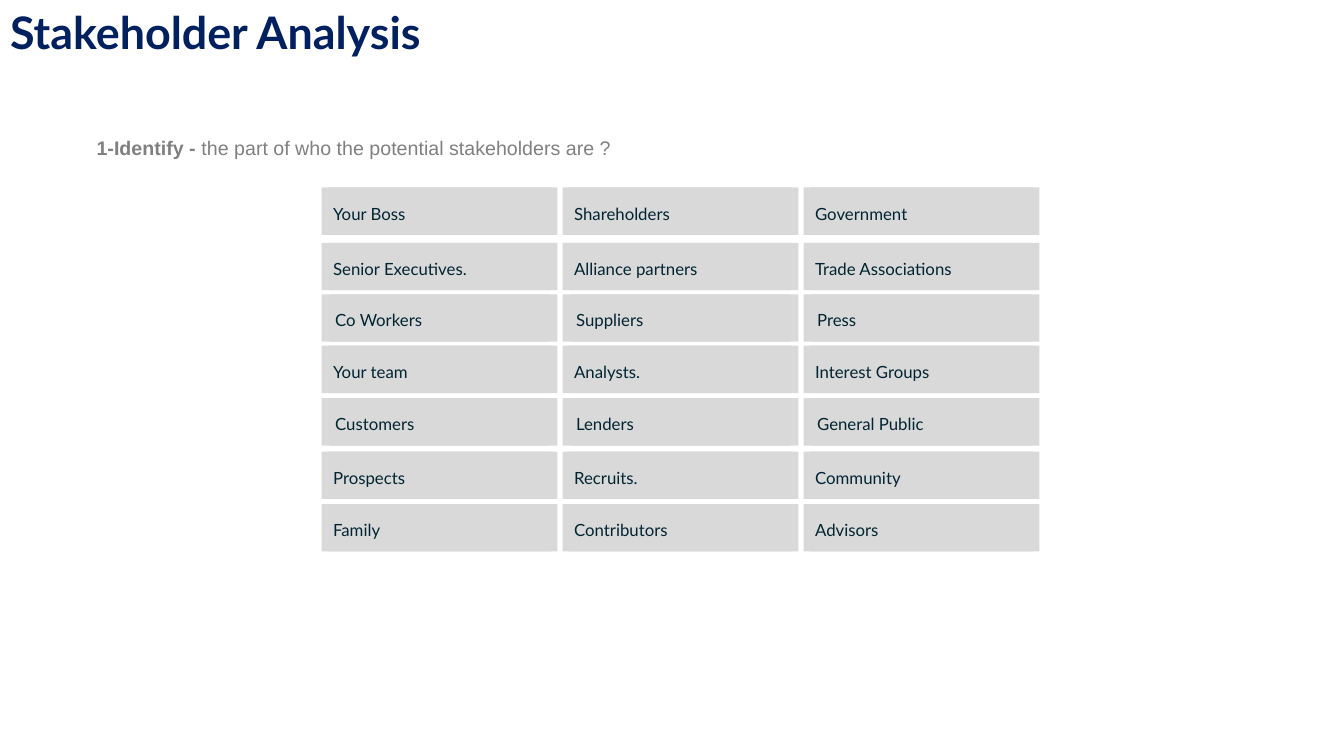
from pptx import Presentation, util as u
from pptx.dml.color import RGBColor
from pptx.enum import shapes, text

NAVY = RGBColor(0x00, 0x20, 0x60)
INK = RGBColor(0x02, 0x24, 0x31)
GREY = RGBColor(0x80, 0x80, 0x80)
TILE = RGBColor(0xD9, 0xD9, 0xD9)

COLUMN_LEFT, COLUMN_PITCH = 23.93, 17.93
TILE_WIDTH, TILE_HEIGHT = 17.55, 6.27
WIDE, NARROW = 16.58, 16.28

# Each row: top, label width, stakeholders
STAKEHOLDERS = [
    (24.8, WIDE, ("Your Boss", "Shareholders", "Government")),
    (32.13, WIDE, ("Senior Executives.", "Alliance partners", "Trade Associations")),
    (38.93, NARROW, ("Co Workers", "Suppliers", "Press")),
    (45.73, WIDE, ("Your team", "Analysts.", "Interest Groups")),
    (52.67, NARROW, ("Customers", "Lenders", "General Public")),
    (59.73, WIDE, ("Prospects", "Recruits.", "Community")),
    (66.67, WIDE, ("Family", "Contributors", "Advisors")),
]


class StakeholderSlide:
    """Style and current slide; every length is a percentage of the slide."""

    heading_style = {"name": "Lato", "size": u.Pt(32), "bold": True}
    intro_style = {"name": "Arial", "size": u.Pt(14)}
    label_style = {"name": "Lato", "size": u.Pt(12), "bold": False}
    label_frame = {
        "margin_left": u.Inches(0.05), "margin_right": u.Inches(0.05),
        "margin_top": u.Inches(0.03), "margin_bottom": u.Inches(0.03),
        "vertical_anchor": text.MSO_ANCHOR.MIDDLE, "word_wrap": True,
    }

    def __init__(self, deck):
        self.width, self.height = deck.slide_width, deck.slide_height
        self.slide = deck.slides.add_slide(deck.slide_layouts[5])

    def area(self, left, top, width, height):
        return [round(share * side / 100) for share, side in
                zip((left, top, width, height), (self.width, self.height) * 2)]

    @staticmethod
    def apply(target, values):
        for key, value in values.items():
            setattr(target, key, value)

    def add_words(self, paragraph, wording, style, color, **extra):
        run = paragraph.add_run()
        run.text = wording
        self.apply(run.font, {**style, **extra})
        run.font.color.rgb = color

    def heading(self, wording, *place):
        title = self.slide.shapes.title
        self.apply(title, dict(zip(("left", "top", "width", "height"), self.area(*place))))
        self.apply(title.text_frame, {"vertical_anchor": text.MSO_ANCHOR.TOP,
                                      "auto_size": text.MSO_AUTO_SIZE.NONE})
        paragraph = title.text_frame.paragraphs[0]
        paragraph.alignment = text.PP_ALIGN.LEFT
        self.add_words(paragraph, wording, self.heading_style, NAVY)

    def intro(self, lead, question, *place):
        frame = self.slide.shapes.add_textbox(*self.area(*place)).text_frame
        frame.word_wrap = True
        for wording, bold in ((lead, True), (question, False)):
            self.add_words(frame.paragraphs[0], wording, self.intro_style, GREY, bold=bold)

    def tile(self, left, top, width):
        tile = self.slide.shapes.add_shape(
            shapes.MSO_SHAPE.RECTANGLE, *self.area(left, top, width, TILE_HEIGHT))
        tile.shadow.inherit = False
        tile.fill.solid()
        tile.fill.fore_color.rgb = TILE
        tile.line.fill.background()
        return tile

    def stakeholder(self, name, column, top, label_width):
        """Draw a tile with a narrower label centred on it."""
        left = COLUMN_LEFT + column * COLUMN_PITCH
        self.tile(left, top, TILE_WIDTH)
        label = self.tile(left + (TILE_WIDTH - label_width) / 2, top, label_width)
        self.apply(label.text_frame, self.label_frame)
        paragraph = label.text_frame.paragraphs[0]
        self.apply(paragraph, {"alignment": text.PP_ALIGN.LEFT, "line_spacing": u.Pt(17.5)})
        self.add_words(paragraph, name, self.label_style, INK)


def main():
    deck = Presentation()
    deck.slide_width, deck.slide_height = u.Inches(13.33), u.Inches(7.5)
    page = StakeholderSlide(deck)
    page.heading("Stakeholder Analysis", 0, 0, 64.59, 8.53)
    page.intro("1-Identify - ", "the part of who the potential stakeholders are ?",
               6.45, 17.33, 68.64, 7.6)
    for top, label_width, names in STAKEHOLDERS:
        for column, name in enumerate(names):
            page.stakeholder(name, column, top, label_width)
    deck.save("out.pptx")


if __name__ == "__main__":
    main()
